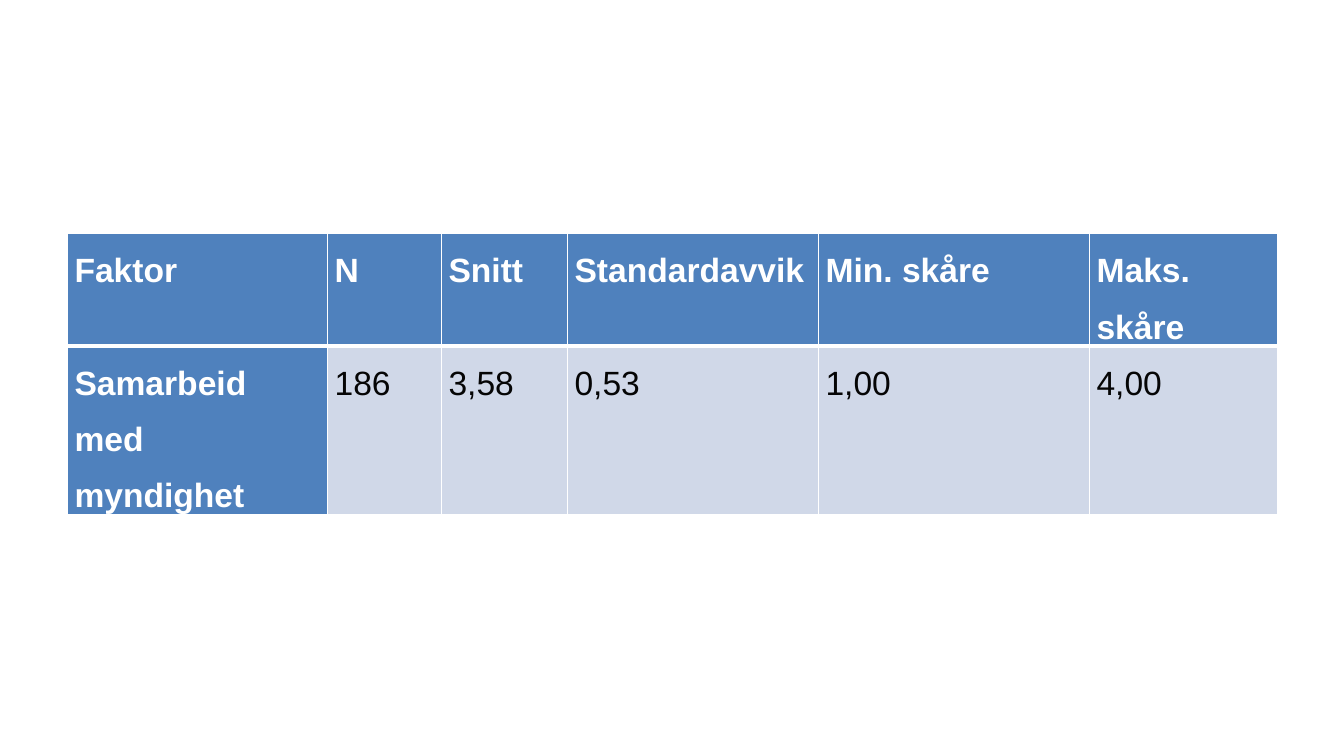
from dataclasses import dataclass

from lxml.etree import SubElement
from pptx import Presentation
from pptx.dml.color import RGBColor
from pptx.oxml.ns import qn
from pptx.table import _Cell as Cell
from pptx.util import Pt

WHITE = RGBColor(0xFF, 0xFF, 0xFF)
NEAR_BLACK = RGBColor(0x05, 0x05, 0x05)
BLUE = RGBColor(0x4F, 0x81, 0xBD)
PALE_BLUE = RGBColor(0xD0, 0xD8, 0xE8)

TABLE_LEFT, TABLE_TOP = 48.24, 167
TABLE_HEIGHT = 216
ROW_HEIGHT = 79.2
THIN, THICK = 1, 3


@dataclass(frozen=True)
class Column:
    heading: str
    value: str
    width: float


COLUMNS = [
    Column("Faktor", "Samarbeid med myndighet", 185.8),
    Column("N", "186", 81.4),
    Column("Snitt", "3,58", 90),
    Column("Standardavvik", "0,53", 179.3),
    Column("Min. skåre", "1,00", 193.6),
    Column("Maks. skåre", "4,00", 134.6),
]


def write_text(cell: Cell, text: str, *, color: RGBColor, bold: bool,
               size: float = 24, font_name: str = "Arial") -> None:
    cell.margin_left = cell.margin_right = Pt(5)
    cell.margin_top = cell.margin_bottom = Pt(0)
    paragraph = cell.text_frame.paragraphs[0]
    paragraph.line_spacing = 1.5
    run = paragraph.add_run()
    run.text = text
    font = run.font
    font.name, font.size, font.bold = font_name, Pt(size), bold
    font.color.rgb = color


def add_borders(cell: Cell, top: float, bottom: float) -> None:
    """Draw white edges; call before filling, as borders precede the fill."""
    properties = cell._tc.get_or_add_tcPr()
    edges = {"a:lnL": THIN, "a:lnR": THIN, "a:lnT": top, "a:lnB": bottom}
    for tag, width in edges.items():
        line = SubElement(properties, qn(tag), w=str(Pt(width)))
        fill = SubElement(line, qn("a:solidFill"))
        SubElement(fill, qn("a:srgbClr"), val=str(WHITE))


def format_cell(cell: Cell, text: str, *, is_heading: bool,
                top: float, bottom: float) -> None:
    write_text(cell, text, color=WHITE if is_heading else NEAR_BLACK,
               bold=is_heading)
    add_borders(cell, top, bottom)
    cell.fill.solid()
    cell.fill.fore_color.rgb = BLUE if is_heading else PALE_BLUE


def main() -> None:
    presentation = Presentation()
    presentation.slide_width, presentation.slide_height = Pt(960), Pt(540)
    slide = presentation.slides.add_slide(presentation.slide_layouts[6])

    total_width = sum(column.width for column in COLUMNS)
    shape = slide.shapes.add_table(
        2, len(COLUMNS), Pt(TABLE_LEFT), Pt(TABLE_TOP),
        Pt(total_width), Pt(TABLE_HEIGHT))
    table = shape.table
    table.first_col = True
    table.horz_banding = False
    for row in table.rows:
        row.height = Pt(ROW_HEIGHT)
    shape.height = Pt(TABLE_HEIGHT)

    for index, column in enumerate(COLUMNS):
        table.columns[index].width = Pt(column.width)
        format_cell(table.cell(0, index), column.heading, is_heading=True,
                    top=THIN, bottom=THICK)
        format_cell(table.cell(1, index), column.value, is_heading=index == 0,
                    top=THICK, bottom=THIN)

    presentation.save("out.pptx")


if __name__ == "__main__":
    main()
